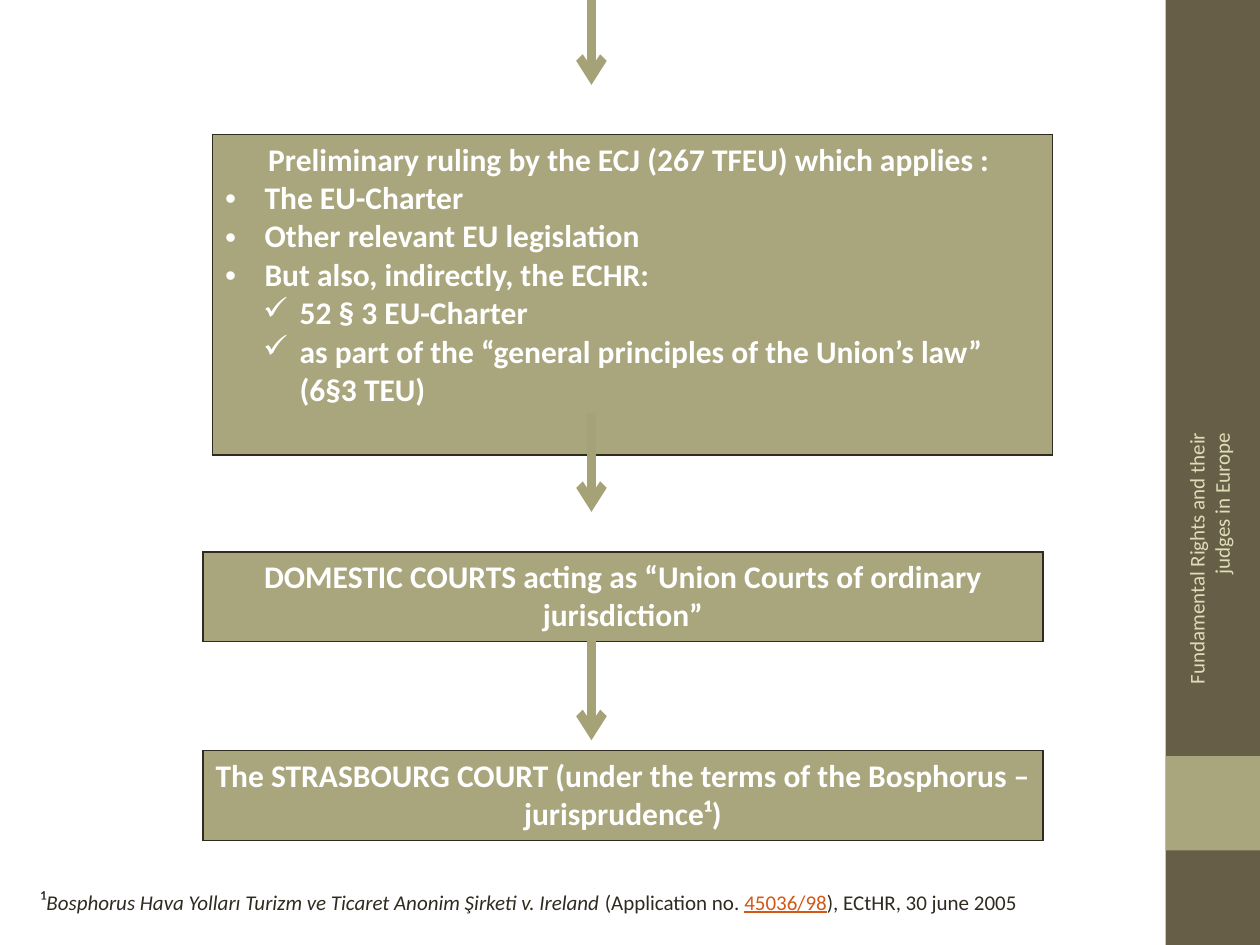
"""Build a slide on how rulings flow between European courts."""
from lxml import etree
from pptx import Presentation
from pptx.dml.color import RGBColor
from pptx.enum.shapes import MSO_CONNECTOR, MSO_SHAPE
from pptx.enum.text import MSO_ANCHOR, PP_ALIGN
from pptx.oxml.ns import qn
from pptx.util import Pt

LINE, RECT = MSO_CONNECTOR.STRAIGHT, MSO_SHAPE.RECTANGLE
LEFT, CENTER, RIGHT = PP_ALIGN.LEFT, PP_ALIGN.CENTER, PP_ALIGN.RIGHT
MIDDLE, TOP = MSO_ANCHOR.MIDDLE, MSO_ANCHOR.TOP
HEX = {"bar": "675E47", "olive": "A9A57C", "arrow": "A6A278", "ink": "2F2B20",
       "pale": "DFDCB7", "white": "FFFFFF", "link": "D25814"}
DOT, TICK = ("•", 22.5, "Arial"), ("✓", 21, "Wingdings")

BARS = [("bar", 0, 540), ("olive", 432, 54)]
BOXES = [
    (121.5, 77, 183, [
        ("Preliminary ruling by the ECJ (267 TFEU) which applies : ", None, 0),
        ("The EU-Charter", DOT, 22.5),
        ("Other relevant EU legislation", DOT, 22.5),
        ("But also, indirectly, the ECHR:", DOT, 22.5),
        ("52 § 3 EU-Charter", TICK, 42.5),
        ("as part of the “general principles of the Union’s law” (6§3 TEU)", TICK, 42.5)]),
    (116, 315.5, 51, [
        ("DOMESTIC COURTS acting as “Union Courts of ordinary jurisdiction”", None, 0)]),
    (116, 429, 51, [
        ("The STRASBOURG COURT (under the terms of the Bosphorus – jurisprudence¹)", None, 0)]),
]
WIDTH = 480
ARROWS = [-8, 236, 366.5]
MID, DROP = 338, 56.5
SIDE = "Fundamental Rights and their judges in Europe"
NOTE = [
    ("¹", {"size": 14}),
    ("Bosphorus Hava Yolları Turizm ve Ticaret Anonim Şirketi v. Ireland ", {"italic": True}),
    ("(Application no. ", {}),
    ("45036/98", {"color": "link", "under": True}),
    ("), ECtHR, 30 june 2005", {}),
]


def rgb(name):
    return RGBColor.from_string(HEX[name])


def node(parent, tag, **attrs):
    return etree.SubElement(parent, qn(tag), attrs)


def write(para, text, size=12, color="ink", bold=False, italic=False, under=False, align=LEFT):
    para.alignment = align
    run = para.add_run()
    run.text = text
    font = run.font
    font.name, font.size = "Calibri", Pt(size)
    font.bold, font.italic, font.underline = bold, italic, under
    font.color.rgb = rgb(color)


def bullet(para, mark, hang, face, left):
    props = para._p.get_or_add_pPr()
    props.set("marL", str(Pt(left)))
    props.set("indent", str(-Pt(hang)))
    node(props, "a:buFont", typeface=face)
    node(props, "a:buChar", char="ü" if mark == TICK[0] else mark)


def border(cell):
    props = cell._tc.get_or_add_tcPr()
    for pos, side in enumerate(("a:lnL", "a:lnR", "a:lnT", "a:lnB")):
        edge = etree.Element(qn(side), w=str(Pt(1)))
        node(node(edge, "a:solidFill"), "a:srgbClr", val=HEX["ink"])
        props.insert(pos, edge)


def box(shapes, left, top, high, lines):
    table = shapes.add_table(1, 1, Pt(left), Pt(top), Pt(WIDTH), Pt(high)).table
    table.first_row = table.horz_banding = False
    cell = table.cell(0, 0)
    cell.fill.solid()
    cell.fill.fore_color.rgb = rgb("olive")
    border(cell)
    frame = cell.text_frame
    for pos, (text, mark, inset) in enumerate(lines):
        para = frame.add_paragraph() if pos else frame.paragraphs[0]
        if mark:
            bullet(para, *mark, inset)
        write(para, text, size=18, color="white", bold=True, align=LEFT if mark else CENTER)


def arrow(shapes, top):
    link = shapes.add_connector(LINE, Pt(MID), Pt(top), Pt(MID), Pt(top + DROP))
    link.line.color.rgb = rgb("arrow")
    link.line.width = Pt(5)
    node(link.line._get_or_add_ln(), "a:tailEnd", type="arrow")
    node(link._element.spPr, "a:effectLst")


def label(shapes, left, top, wide, high, anchor=TOP):
    area = shapes.add_textbox(Pt(left), Pt(top), Pt(wide), Pt(high))
    area.text_frame.word_wrap = True
    area.text_frame.vertical_anchor = anchor
    return area, area.text_frame.paragraphs[0]


def main():
    deck = Presentation()
    deck.slide_width, deck.slide_height = Pt(720), Pt(540)
    shapes = deck.slides.add_slide(deck.slide_layouts[6]).shapes
    for color, top, high in BARS:
        bar = shapes.add_shape(RECT, Pt(666), Pt(top), Pt(54), Pt(high))
        bar.shadow.inherit = False
        bar.fill.solid()
        bar.fill.fore_color.rgb = rgb(color)
        bar.line.fill.background()
    for item in BOXES:
        box(shapes, *item)
    for top in ARROWS:
        arrow(shapes, top)
    side, para = label(shapes, 597.5, 319, 186.5, 29, anchor=MIDDLE)
    side.rotation = 270
    write(para, SIDE, color="pale", align=RIGHT)
    _, para = label(shapes, 16, 502.5, 599, 46)
    for text, style in NOTE:
        write(para, text, **style)
    deck.save("out.pptx")


if __name__ == "__main__":
    main()
